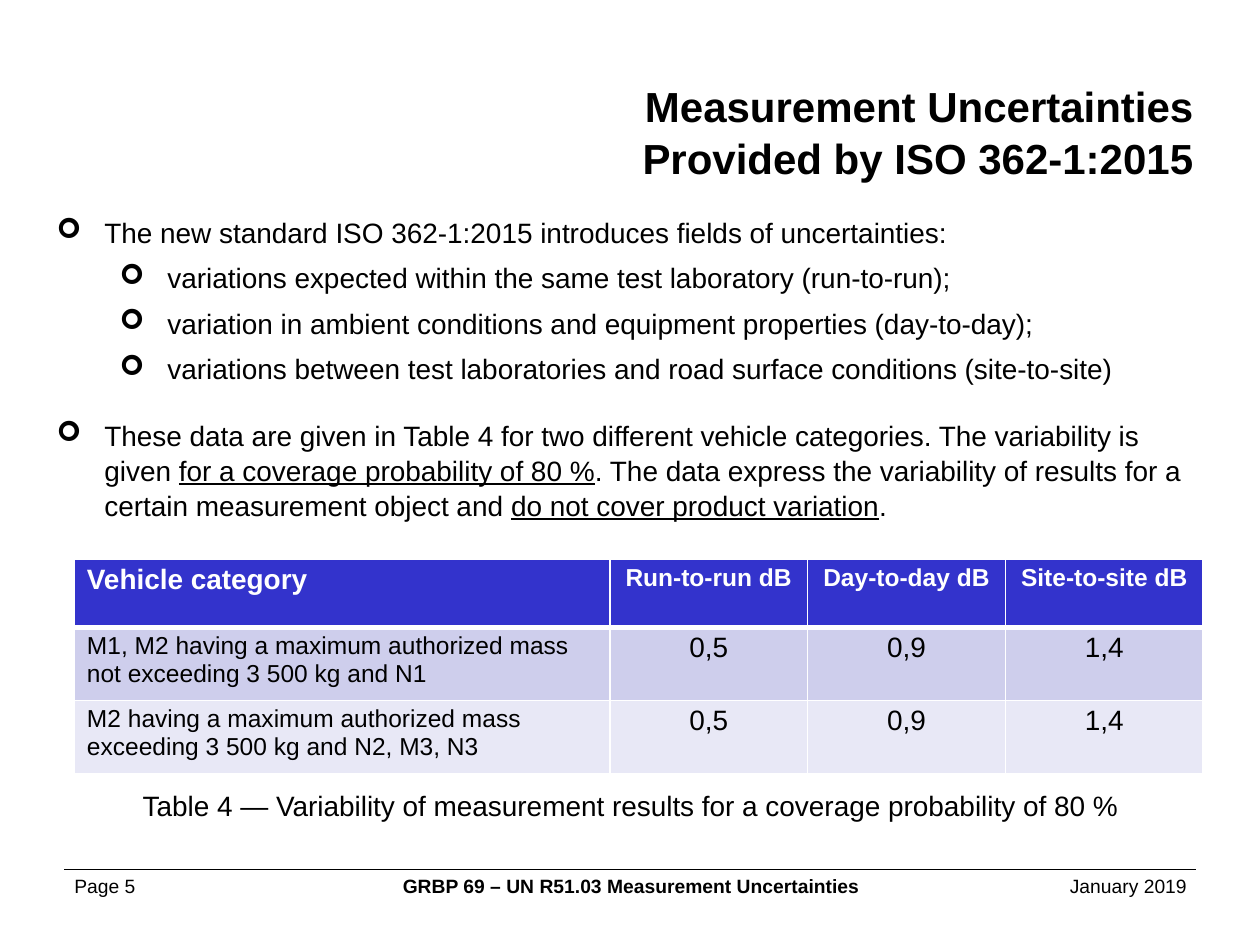
import pptx
import pptx.util
import pptx.dml.color
import pptx.enum.shapes
import pptx.enum.text
import pptx.oxml.ns
from dataclasses import dataclass
from lxml import etree

Inches, Pt = pptx.util.Inches, pptx.util.Pt
RGB = pptx.dml.color.RGBColor.from_string
ALIGN = pptx.enum.text.PP_ALIGN
qn = pptx.oxml.ns.qn


@dataclass(frozen=True)
class Theme:
    font: str = "Arial"
    black: str = "000000"
    white: str = "FFFFFF"
    header: str = "3333CC"
    bands: tuple = ("CECEEC", "E8E8F6")
    title: int = 24
    body: int = 16
    small: int = 14
    footer: int = 11


theme = Theme()


def add_text_box(left, top, width, height, wrap=True):
    sp = s.shapes.add_textbox(Inches(left), Inches(top), Inches(width), Inches(height))
    sp.text_frame.word_wrap = wrap
    sp.text_frame.auto_size = pptx.enum.text.MSO_AUTO_SIZE.SHAPE_TO_FIT_TEXT
    return sp.text_frame


def style(p, size, color=theme.black, bold=False, align=ALIGN.LEFT):
    p.alignment = align
    for r in p.runs:
        r.font.name = theme.font
        r.font.size = Pt(size)
        r.font.bold = bold
        r.font.color.rgb = RGB(color)


prs = pptx.Presentation()
prs.slide_width, prs.slide_height = Inches(10), Inches(7.5)
s = prs.slides.add_slide(prs.slide_layouts[6])

# Footer
rule = s.shapes.add_connector(pptx.enum.shapes.MSO_CONNECTOR.STRAIGHT,
                              Inches(0.51), Inches(6.9), Inches(9.49), Inches(6.9))
rule.line.color.rgb = RGB(theme.black)
rule.line.width = Pt(1)
etree.SubElement(rule._element.spPr, qn("a:effectLst"))

p = add_text_box(0.28, 6.89, 9.45, 0.29).paragraphs[0]
tabs = etree.SubElement(p._p.get_or_add_pPr(), qn("a:tabLst"))
for position, kind in ((4.42, "ctr"), (8.83, "r")):
    etree.SubElement(tabs, qn("a:tab"), pos=str(Inches(position)), algn=kind)
for text in ("Page 5\t", "GRBP 69 – UN R51.03 Measurement Uncertainties\t", "January 2019"):
    p.add_run().text = text
style(p, theme.footer, align=ALIGN.CENTER)
p.runs[1].font.bold = True

# Title
p = add_text_box(4.06, 0.57, 5.51, 0.91).paragraphs[0]
p.text = "Measurement Uncertainties Provided by ISO 362-1:2015"
p.line_spacing = 1.04
style(p, theme.title, bold=True, align=ALIGN.RIGHT)

# Bullets: level, space before, runs (every second run is underlined)
bullets = [
    (0, 0, ["The new standard ISO 362-1:2015 introduces fields of uncertainties:"]),
    (1, 6, ["variations expected within the same test laboratory (run-to-run);"]),
    (1, 6, ["variation in ambient conditions and equipment properties (day-to-day);"]),
    (1, 6, ["variations between test laboratories and road surface conditions (site-to-site)"]),
    (0, 18, ["These data are given in Table 4 for two different vehicle categories. "
             "The variability is given ",
             "for a coverage probability of 80 %",
             ". The data express the variability of results for a certain measurement object and ",
             "do not cover product variation",
             "."]),
]
tf = add_text_box(0.35, 1.65, 9.29, 2.49)
for i, (level, space, texts) in enumerate(bullets):
    p = tf.add_paragraph() if i else tf.paragraphs[0]
    pPr = p._p.get_or_add_pPr()
    pPr.set("marL", str(Inches(0.38 + 0.5 * level)))
    pPr.set("indent", str(Inches(-0.38)))
    etree.SubElement(pPr, qn("a:buFont"), typeface="Wingdings")
    etree.SubElement(pPr, qn("a:buChar"), char="➢")
    p.level = level
    p.line_spacing = 1.04
    p.space_before = Pt(space)
    for j, text in enumerate(texts):
        r = p.add_run()
        r.text = text
        r.font.underline = j % 2 == 1
    style(p, theme.body)

# Table
rows = [
    ("Vehicle category", "Run-to-run dB", "Day-to-day dB", "Site-to-site dB"),
    ("M1, M2 having a maximum authorized mass not exceeding 3 500 kg and N1",
     "0,5", "0,9", "1,4"),
    ("M2 having a maximum authorized mass exceeding 3 500 kg and N2, M3, N3",
     "0,5", "0,9", "1,4"),
]
table = s.shapes.add_table(3, 4, Inches(0.59), Inches(4.44), Inches(8.98), Inches(1.7)).table
for column, width in zip(table.columns, (4.25, 1.57, 1.57, 1.57)):
    column.width = Inches(width)
for row, height in zip(table.rows, (0.54, 0.58, 0.58)):
    row.height = Inches(height)
for i, values in enumerate(rows):
    for j, value in enumerate(values):
        cell = table.cell(i, j)
        cell.margin_left = cell.margin_right = Inches(0.1)
        cell.margin_top, cell.margin_bottom = Inches(0.04), 0
        cell.fill.solid()
        cell.fill.fore_color.rgb = RGB((theme.header, *theme.bands)[i])
        p = cell.text_frame.paragraphs[0]
        p.text = value
        style(p, theme.body if (i == 0) == (j == 0) else theme.small,
              theme.black if i else theme.white, i == 0,
              ALIGN.CENTER if j else ALIGN.LEFT)
        tcPr = cell._tc.get_or_add_tcPr()
        for k, side in enumerate(("lnL", "lnR", "lnT", "lnB")):
            thick = (i, side) in ((0, "lnB"), (1, "lnT"))
            border = etree.Element(qn("a:" + side), w=str(Pt(3 if thick else 1)))
            fill = etree.SubElement(border, qn("a:solidFill"))
            etree.SubElement(fill, qn("a:srgbClr"), val=theme.white)
            tcPr.insert(k, border)

# Caption
p = add_text_box(0.98, 6.21, 8.05, 0.37, wrap=False).paragraphs[0]
p.text = "Table 4 — Variability of measurement results for a coverage probability of 80 %"
style(p, theme.body, align=ALIGN.CENTER)

prs.save("out.pptx")
